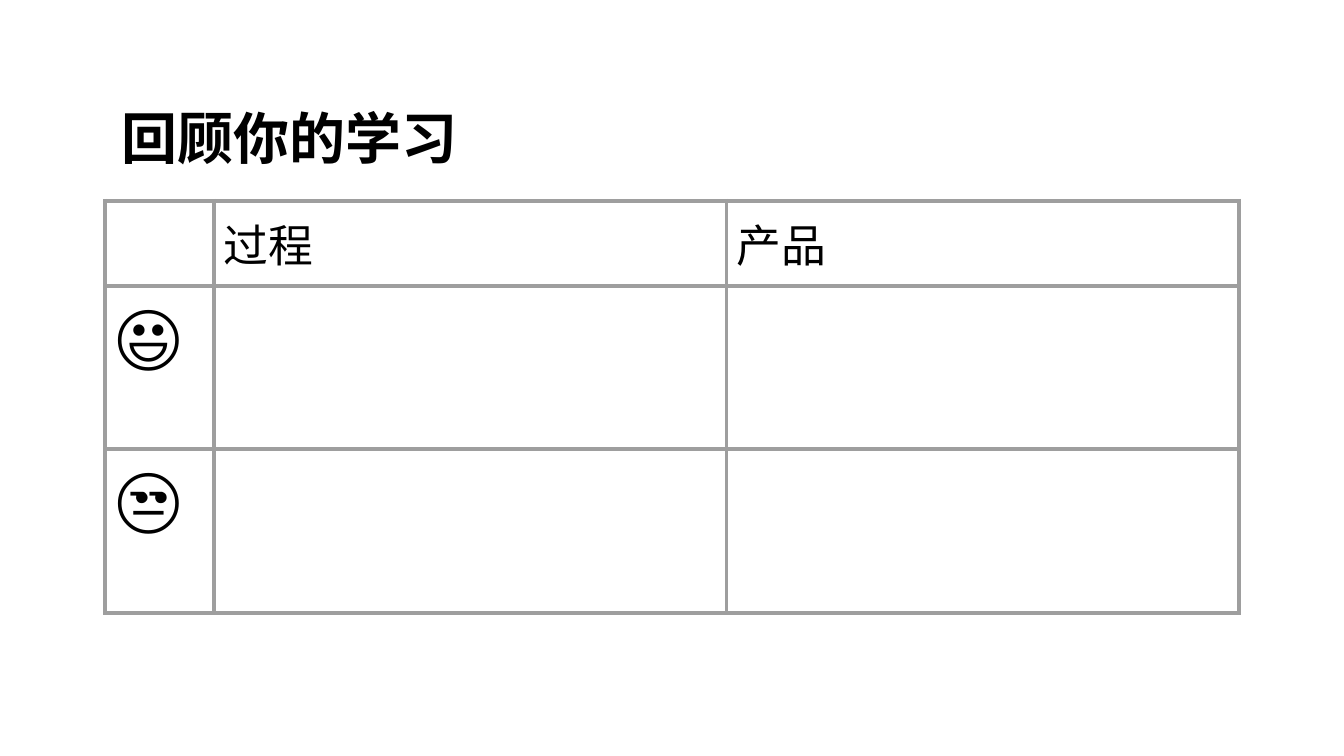
"""Build a slide with a grid for reviewing learning."""
from pptx import Presentation, oxml
from pptx.dml.color import RGBColor
from pptx.enum import text
from pptx.oxml import ns
from pptx.util import Cm, Pt

TITLE = "回顾你的学习"
ROWS = [("", "过程", "产品"), ("😃", "", ""), ("😒", "", "")]
COLS = (2.74, 12.92, 12.92)
HEIGHTS = (2.13, 4.12, 4.12)
THEME = dict(font="Arial", ink="000000", grid="9E9E9E",
             title=40, head=32, face=52, line=3, pad=0.25)


def style(par, size, bold=False):
    """Set the font of a paragraph."""
    font = par.font
    font.name, font.size, font.bold = THEME["font"], Pt(size), bold
    font.color.rgb = RGBColor.from_string(THEME["ink"])


def border(cell):
    """Draw all four edges of a cell."""
    props = cell._tc.get_or_add_tcPr()
    for side in "LRTB":
        props.append(oxml.parse_xml(
            f'<a:ln{side} {ns.nsdecls("a")} w="{Pt(THEME["line"])}">'
            f'<a:solidFill><a:srgbClr val="{THEME["grid"]}"/></a:solidFill>'
            f'</a:ln{side}>'))


def add_title(slide):
    """Place the heading."""
    title = slide.shapes.title
    title.left, title.top, title.width, title.height = (
        Cm(2.82), Cm(2.4), Cm(28), Cm(2))
    frame = title.text_frame
    frame.text = TITLE
    frame.auto_size = text.MSO_AUTO_SIZE.NONE
    frame.vertical_anchor = text.MSO_ANCHOR.MIDDLE
    par = frame.paragraphs[0]
    par.alignment = text.PP_ALIGN.LEFT
    par.line_spacing = 1.07
    style(par, THEME["title"], True)


def add_grid(slide):
    """Place the review table."""
    grid = slide.shapes.add_table(
        len(ROWS), len(COLS), Cm(2.65), Cm(5.06),
        Cm(sum(COLS)), Cm(sum(HEIGHTS))).table
    grid.first_row = grid.horz_banding = False
    for col, width in zip(grid.columns, COLS):
        col.width = Cm(width)
    for i, (row, high) in enumerate(zip(ROWS, HEIGHTS)):
        grid.rows[i].height = Cm(high)
        for j, word in enumerate(row):
            cell = grid.cell(i, j)
            pad = Cm(THEME["pad"])
            cell.margin_left = cell.margin_right = pad
            cell.margin_top = cell.margin_bottom = pad
            border(cell)
            cell.fill.background()
            if word:
                cell.text = word
                style(cell.text_frame.paragraphs[0],
                      THEME["face" if i else "head"])


def main():
    """Build and save the deck."""
    deck = Presentation()
    deck.slide_width, deck.slide_height = Cm(33.87), Cm(19.05)
    slide = deck.slides.add_slide(deck.slide_layouts[5])
    add_title(slide)
    add_grid(slide)
    deck.save("out.pptx")


if __name__ == "__main__":
    main()
